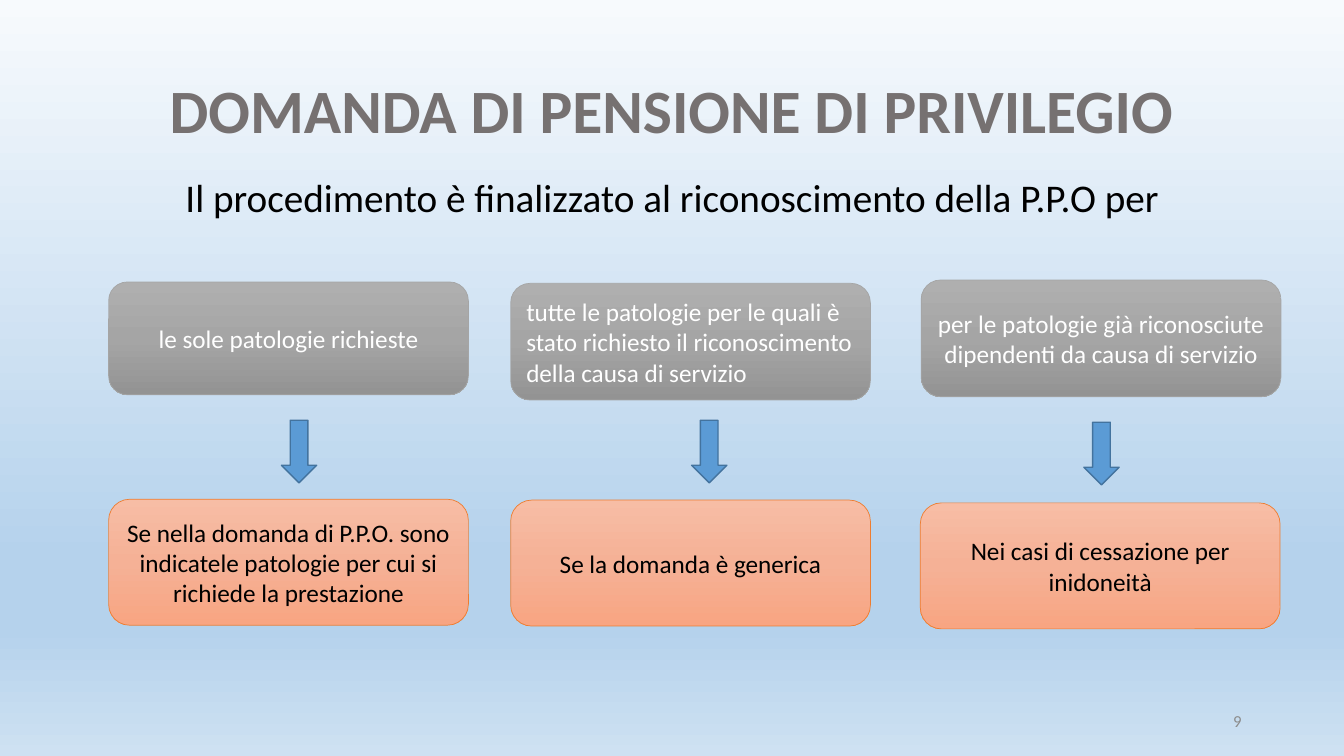
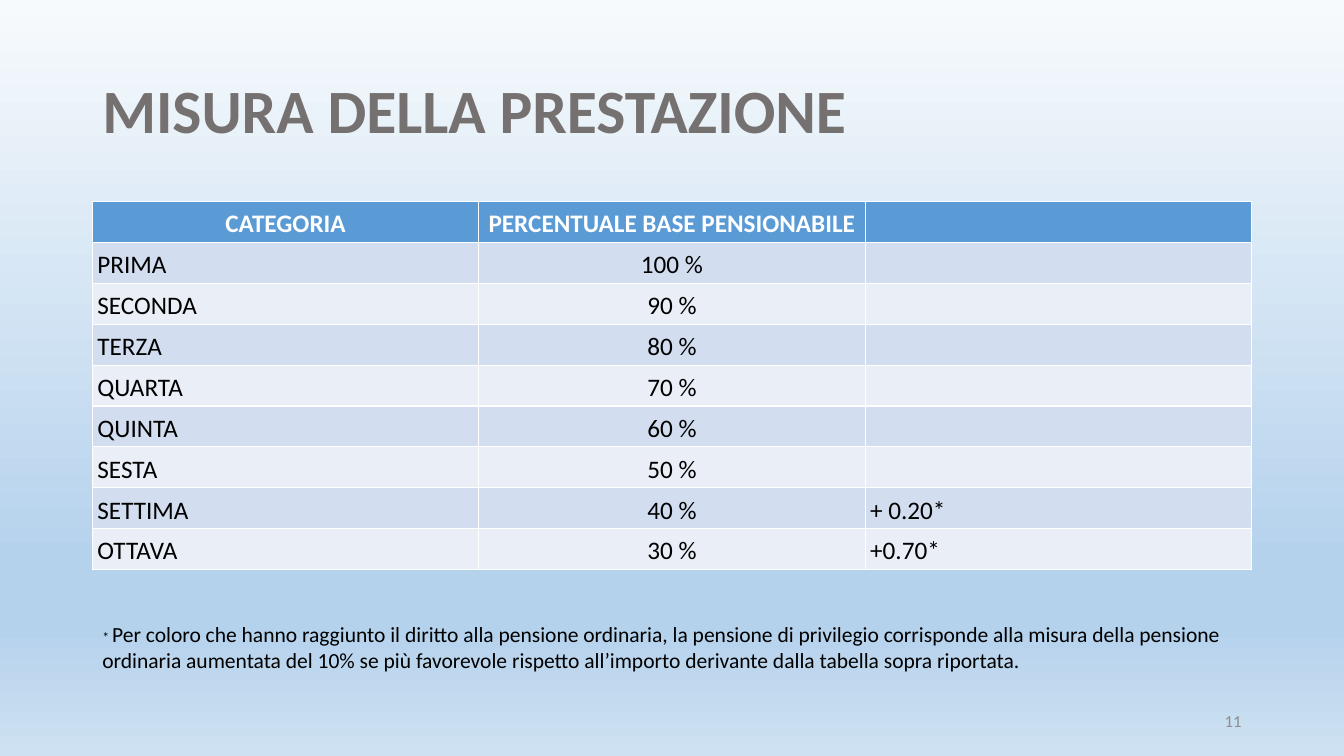
import pptx
import pptx.dml.color
import pptx.enum.shapes
import pptx.enum.text
import pptx.oxml.ns
import pptx.util
from lxml import etree

Pt = pptx.util.Pt
ALIGN = pptx.enum.text.PP_ALIGN
ANCHOR = pptx.enum.text.MSO_ANCHOR
SHAPE = pptx.enum.shapes.MSO_SHAPE
qn = pptx.oxml.ns.qn


# Theme: colours, type sizes and the shared margins
class Theme:
    font = "Calibri"
    title, subtitle, body, note, mark, number = 44, 28, 18, 15.4, 9.9, 12
    title_color, number_color = "767171", "8C8C8C"
    dark, light = "000000", "FFFFFF"
    background = [(0, "F7FAFD"), (74, "B5D2EC"), (83, "B5D2EC"), (100, "CEE1F2")]
    grey = [(0, "AFAFAF"), (50, "A5A5A5"), (100, "939393")]
    grey_line = "A5A5A5"
    orange = [(0, "F7BDA5"), (50, "F5B196"), (100, "F8A582")]
    orange_line = "ED7D31"
    blue, blue_line = "5B9BD5", "43739E"
    bands = ["D2DEEF", "EAEFF7"]
    left, width = 66, 828


# Content
REQUEST = {
    "title": "DOMANDA DI PENSIONE DI PRIVILEGIO",
    "subtitle": "Il procedimento è finalizzato al riconoscimento della P.P.O per",
    "number": "9",
}
# Each box: text, alignment, (left, top, height); each arrow: (left, top)
BOX_WIDTH, ARROW_SIZE = 257, (25.2, 44.8)
COLUMNS = [
    {
        "scope": ("le sole patologie richieste", ALIGN.CENTER, (77.6, 201.4, 80.6)),
        "arrow": (201, 300.2),
        "case": ("Se nella domanda di P.P.O. sono indicatele patologie per cui si "
                 "richiede la prestazione", ALIGN.CENTER, (77.6, 356.6, 90)),
    },
    {
        "scope": ("tutte le patologie per le quali è stato richiesto il riconoscimento "
                  "della causa di servizio", ALIGN.LEFT, (364.8, 202.4, 83.4)),
        "arrow": (494, 300.2),
        "case": ("Se la domanda è generica", ALIGN.CENTER, (364.8, 357.2, 90)),
    },
    {
        "scope": ("per le patologie già riconosciute dipendenti da causa di servizio",
                  ALIGN.CENTER, (658, 200, 83.4)),
        "arrow": (774.2, 301.6),
        "case": ("Nei casi di cessazione per inidoneità", ALIGN.CENTER, (657.4, 359.2, 90)),
    },
]
MEASURE = {"title": "MISURA DELLA PRESTAZIONE", "number": "11"}
ROWS = [
    ("CATEGORIA", "PERCENTUALE BASE PENSIONABILE", ""),
    ("PRIMA", "100 %", ""),
    ("SECONDA", "90 %", ""),
    ("TERZA", "80 %", ""),
    ("QUARTA", "70 %", ""),
    ("QUINTA", "60 %", ""),
    ("SESTA", "50 %", ""),
    ("SETTIMA", "40 %", "+ 0.20*"),
    ("OTTAVA", "30 %", "+0.70*"),
]
NOTE = [
    ("* ", Theme.mark),
    ("Per coloro che hanno raggiunto il diritto alla pensione ordinaria, la pensione di "
     "privilegio corrisponde alla misura della pensione ordinaria aumentata del 10% se più "
     "favorevole rispetto all’importo derivante dalla tabella sopra riportata.", Theme.note),
]


# Helpers
def rgb(color):
    return pptx.dml.color.RGBColor.from_string(color)


def set_gradient(fill, element, stops):
    """Fill from top to bottom with any number of (percent, colour) stops."""
    fill.gradient()
    fill.gradient_angle = 270
    stop_list = element.find(".//" + qn("a:gsLst"))
    for old in list(stop_list):
        stop_list.remove(old)
    for percent, color in stops:
        stop = etree.SubElement(stop_list, qn("a:gs"), pos=str(percent * 1000))
        etree.SubElement(stop, qn("a:srgbClr"), val=color)


def style(p, size, color, align=ALIGN.LEFT, bold=False, spacing=None):
    p.alignment = align
    p.font.name, p.font.size, p.font.bold = Theme.font, Pt(size), bold
    p.font.color.rgb = rgb(color)
    if spacing:
        p.line_spacing = spacing


def add_text(s, box, text, size, color, anchor=ANCHOR.TOP, **options):
    tf = s.shapes.add_textbox(*map(Pt, box)).text_frame
    tf.word_wrap = True
    tf.vertical_anchor = anchor
    p = tf.paragraphs[0]
    p.text = text
    style(p, size, color, **options)
    return p


def add_block(s, kind, box, line, line_width):
    sp = s.shapes.add_shape(kind, *map(Pt, box))
    sp.shadow.inherit = False
    sp.line.color.rgb = rgb(line)
    sp.line.width = Pt(line_width)
    return sp


def add_card(s, card, stops, line, color):
    text, align, (left, top, height) = card
    sp = add_block(s, SHAPE.ROUNDED_RECTANGLE, (left, top, BOX_WIDTH, height), line, 0.5)
    set_gradient(sp.fill, sp._element, stops)
    tf = sp.text_frame
    tf.word_wrap = True
    tf.vertical_anchor = ANCHOR.MIDDLE
    tf.text = text
    style(tf.paragraphs[0], Theme.body, color, align)


def new_slide(prs, content, title_align):
    s = prs.slides.add_slide(prs.slide_layouts[6])
    add_text(s, (Theme.left, 28.8, Theme.width, 104.4), content["title"], Theme.title,
             Theme.title_color, ANCHOR.MIDDLE, align=title_align, bold=True, spacing=0.9)
    add_text(s, (678, 500.4, 216, 28.8), content["number"], Theme.number,
             Theme.number_color, ANCHOR.MIDDLE, align=ALIGN.RIGHT)
    return s


# Slides
def request_slide(prs):
    s = new_slide(prs, REQUEST, ALIGN.CENTER)
    add_text(s, (Theme.left, 124, Theme.width, 62.6), REQUEST["subtitle"], Theme.subtitle,
             Theme.dark, align=ALIGN.CENTER, spacing=0.9)
    for column in COLUMNS:
        add_card(s, column["scope"], Theme.grey, Theme.grey_line, Theme.light)
        add_card(s, column["case"], Theme.orange, Theme.orange_line, Theme.dark)
        arrow = add_block(s, SHAPE.DOWN_ARROW, column["arrow"] + ARROW_SIZE,
                          Theme.blue_line, 1)
        arrow.fill.solid()
        arrow.fill.fore_color.rgb = rgb(Theme.blue)


def measure_slide(prs):
    s = new_slide(prs, MEASURE, ALIGN.LEFT)
    table = s.shapes.add_table(len(ROWS), len(ROWS[0]), Pt(Theme.left), Pt(144),
                               Pt(Theme.width), Pt(29.2 * len(ROWS))).table
    for i, row in enumerate(ROWS):
        header = i == 0
        for j, text in enumerate(row):
            cell = table.cell(i, j)
            cell.fill.solid()
            cell.fill.fore_color.rgb = rgb(Theme.blue if header else Theme.bands[(i - 1) % 2])
            cell.vertical_anchor = ANCHOR.MIDDLE
            cell.margin_left = cell.margin_right = Pt(3.6)
            cell.margin_top = cell.margin_bottom = 0
            cell.text = text
            style(cell.text_frame.paragraphs[0], Theme.body,
                  Theme.light if header else Theme.dark,
                  ALIGN.CENTER if header or j == 1 else ALIGN.JUSTIFY, header, 1.15)

    # Footnote with a small mark
    (mark, mark_size), (note, note_size) = NOTE
    p = add_text(s, (Theme.left, 440, Theme.width, 46), mark, mark_size, Theme.dark)
    r = p.add_run()
    r.text = note
    r.font.size = Pt(note_size)


def main():
    prs = pptx.Presentation()
    prs.slide_width, prs.slide_height = Pt(960), Pt(540)
    master = prs.slide_master
    set_gradient(master.background.fill, master._element, Theme.background)
    request_slide(prs)
    measure_slide(prs)
    prs.save("out.pptx")


if __name__ == "__main__":
    main()
